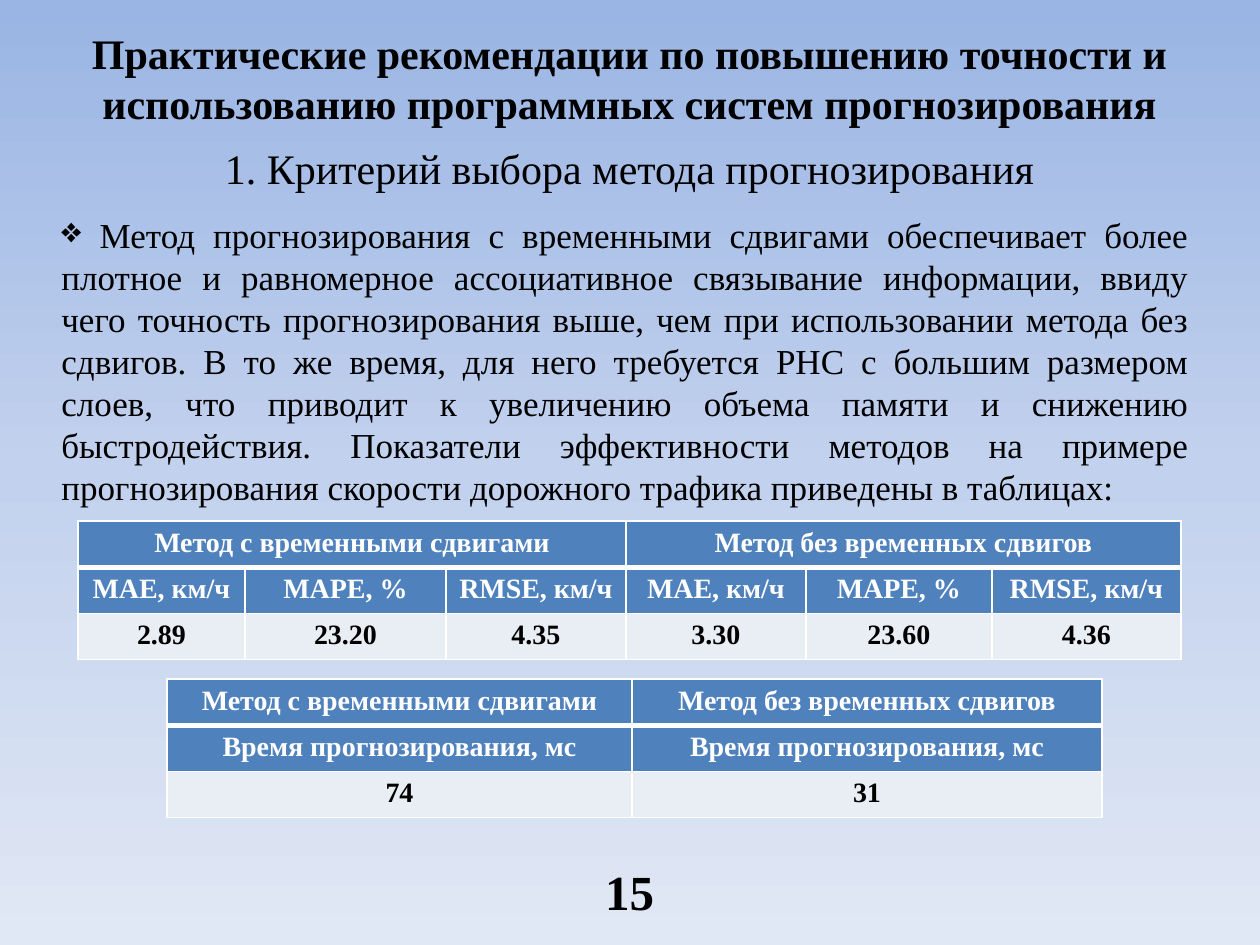
from lxml.etree import SubElement
from pptx import Presentation
from pptx.dml.color import RGBColor
from pptx.enum.text import MSO_ANCHOR as Anchor, PP_ALIGN as Align
from pptx.oxml.ns import qn
from pptx.util import Pt

SCALE = 914400 / 126
FONT = "Times New Roman"
COLORS = {
    "sky_top": "9AB5E4", "sky_middle": "C2D1ED", "sky_bottom": "E1E8F5",
    "text": "000000", "header": "4F81BD", "value": "E9EDF4", "white": "FFFFFF",
}
WITH_SHIFTS = "Метод с временными сдвигами"
WITHOUT_SHIFTS = "Метод без временных сдвигов"
METRICS = ["MAE, км/ч", "MAPE, %", "RMSE, км/ч"]
BODY = (
    " Метод прогнозирования с временными сдвигами обеспечивает более плотное и "
    "равномерное ассоциативное связывание информации, ввиду чего точность "
    "прогнозирования выше, чем при использовании метода без сдвигов. В то же время, "
    "для него требуется РНС с большим размером слоев, что приводит к увеличению "
    "объема памяти и снижению быстродействия. Показатели эффективности методов на "
    "примере прогнозирования скорости дорожного трафика приведены в таблицах:"
)


def px(length):
    return round(length * SCALE)


def write_text(frame, text, size, color="text", bold=False, align=Align.CENTER):
    paragraph = frame.paragraphs[0]
    paragraph.alignment = align
    run = paragraph.add_run()
    run.text = text
    font = run.font
    font.name, font.size, font.bold = FONT, Pt(size), bold
    font.color.rgb = RGBColor.from_string(COLORS[color])
    return paragraph


def add_text(slide, box, text, size, anchor=Anchor.MIDDLE, **text_format):
    frame = slide.shapes.add_textbox(*map(px, box)).text_frame
    frame.word_wrap = True
    frame.vertical_anchor = anchor
    return write_text(frame, text, size, **text_format)


def paint_background(slide):
    fill = slide.background.fill
    fill.gradient()
    fill.gradient_angle = 270  # counter-clockwise: runs from top to bottom
    stops = slide.background._cSld.find(".//" + qn("a:gsLst"))
    stops.clear()
    for position, name in ((0, "sky_top"), (50, "sky_middle"), (100, "sky_bottom")):
        stop = SubElement(stops, qn("a:gs"), pos=str(position * 1000))
        SubElement(stop, qn("a:srgbClr"), val=COLORS[name])


def set_borders(cell, **widths):
    properties = cell._tc.get_or_add_tcPr()
    for index, side in enumerate("LRTB"):
        width = Pt(widths.get(side, 1))
        line = properties.makeelement(qn("a:ln" + side), {"w": str(width)})
        fill = SubElement(line, qn("a:solidFill"))
        SubElement(fill, qn("a:srgbClr"), val=COLORS["white"])
        properties.insert(index, line)  # borders go before the cell fill


def add_heading(slide, box):
    left, top, width, height = box
    add_text(slide, (left, top, width, 98),
             "Практические рекомендации по повышению точности и "
             "использованию программных систем прогнозирования", 24, bold=True)
    add_text(slide, (left, top + height - 98, width, 98),
             "1. Критерий выбора метода прогнозирования", 24)


def add_body(slide, box):
    paragraph = add_text(slide, box, BODY, 20, anchor=Anchor.TOP, align=Align.JUSTIFY)
    properties = paragraph._p.get_or_add_pPr()
    properties.set("marL", "0")
    properties.set("indent", "0")
    SubElement(properties, qn("a:buChar"), char="❖")


def add_results(slide, box, column_widths, metrics, values):
    """Two methods side by side: merged titles, metric names, values."""
    rows = [
        [title for name in (WITH_SHIFTS, WITHOUT_SHIFTS)
         for title in [name] + [""] * (len(metrics) - 1)],
        metrics * 2,
        values,
    ]
    table = slide.shapes.add_table(len(rows), len(values), *map(px, box)).table
    for column, width in zip(table.columns, column_widths):
        column.width = px(width)
    for r, texts in enumerate(rows):
        is_value = r == len(rows) - 1
        for c, text in enumerate(texts):
            cell = table.cell(r, c)
            cell.fill.solid()
            cell.fill.fore_color.rgb = RGBColor.from_string(
                COLORS["value" if is_value else "header"])
            set_borders(cell, T=3 if r == 1 else 1, B=3 if r == 0 else 1)
            if text:
                write_text(cell.text_frame, text, 16, bold=True,
                           color="text" if is_value else "white")
    # Each method title spans its own metrics
    span = len(metrics)
    if span > 1:
        for start in (0, span):
            table.cell(0, start).merge(table.cell(0, start + span - 1))


def main():
    presentation = Presentation()
    presentation.slide_width, presentation.slide_height = px(1260), px(945)
    slide = presentation.slides.add_slide(presentation.slide_layouts[6])
    paint_background(slide)
    add_heading(slide, (39, 29, 1181, 188))
    add_body(slide, (49, 207, 1152, 305))
    # Accuracy, then speed
    add_results(slide, (78, 521, 1103, 138), [167, 201, 180, 180, 186, 189],
                METRICS, ["2.89", "23.20", "4.35", "3.30", "23.60", "4.36"])
    add_results(slide, (167, 679, 935, 138), [465, 470],
                ["Время прогнозирования, мс"], ["74", "31"])
    # Slide number
    add_text(slide, (571, 837, 117, 108), "15", 28, bold=True)
    presentation.save("out.pptx")


if __name__ == "__main__":
    main()
